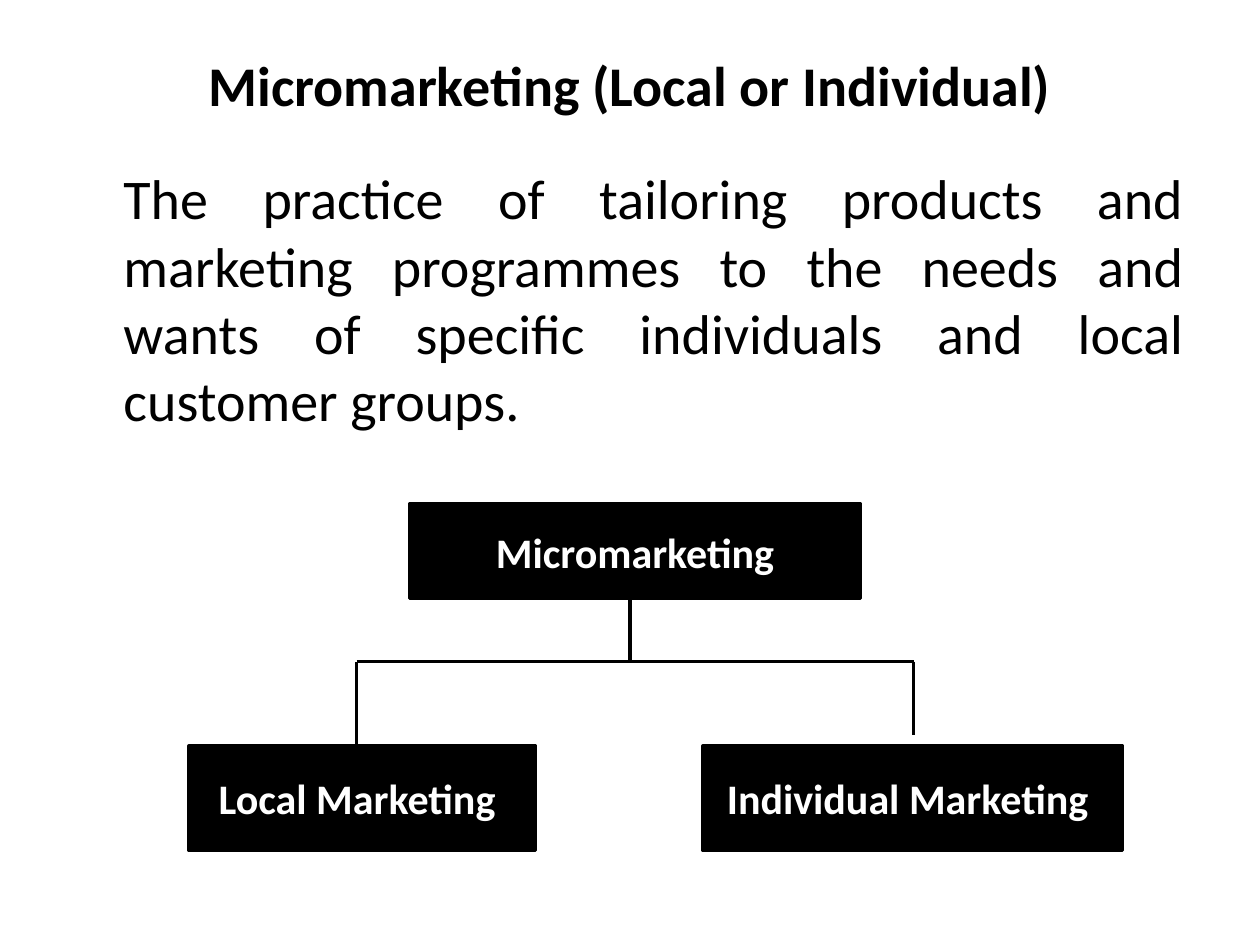
import pptx
import pptx.dml.color
import pptx.enum.shapes
import pptx.enum.text
import pptx.oxml
import pptx.oxml.ns
import pptx.util

Inches, Pt = pptx.util.Inches, pptx.util.Pt
RGB = pptx.dml.color.RGBColor
ALIGN = pptx.enum.text.PP_ALIGN
ANCHOR = pptx.enum.text.MSO_ANCHOR


class Theme:
    ink = RGB.from_string("000000")
    paper = RGB.from_string("FFFFFF")
    line = Pt(2)
    title = {"name": "Calibri", "size": Pt(32), "bold": True}
    body = {"name": "Calibri", "size": Pt(32), "bold": False}
    node = {"name": "Calibri", "size": Pt(24), "bold": True}


def set_attrs(obj, values):
    for name, value in values.items():
        setattr(obj, name, value)


def place(sp, box):
    set_attrs(sp, dict(zip(("left", "top", "width", "height"), map(Inches, box))))


def write(tf, text, font, color, align, anchor):
    set_attrs(tf, {"word_wrap": True, "vertical_anchor": anchor,
                   "auto_size": pptx.enum.text.MSO_AUTO_SIZE.NONE})
    p = tf.paragraphs[0]
    set_attrs(p, {"alignment": align, "space_before": Pt(0)})
    r = p.add_run()
    r.text = text
    set_attrs(r.font, font)
    r.font.color.rgb = color


def add_title(s, box, text):
    place(s.shapes.title, box)
    write(s.shapes.title.text_frame, text, Theme.title, Theme.ink,
          ALIGN.CENTER, ANCHOR.MIDDLE)


def add_definition(s, box, text):
    sp = s.placeholders[1]
    place(sp, box)
    # Indented paragraph without a bullet
    pPr = sp.text_frame.paragraphs[0]._p.get_or_add_pPr()
    pPr.set("marL", str(Inches(0.38)))
    pPr.set("indent", "0")
    pPr.append(pptx.oxml.parse_xml(
        f'<a:buNone {pptx.oxml.ns.nsdecls("a")}/>'))
    write(sp.text_frame, text, Theme.body, Theme.ink, ALIGN.JUSTIFY, ANCHOR.TOP)


def add_node(s, box, text, margin_right=0.1):
    sp = s.shapes.add_shape(pptx.enum.shapes.MSO_SHAPE.RECTANGLE,
                            *map(Inches, box))
    sp.shadow.inherit = False
    sp.fill.solid()
    sp.fill.fore_color.rgb = Theme.ink
    sp.line.color.rgb = Theme.ink
    sp.line.width = Theme.line
    write(sp.text_frame, text, Theme.node, Theme.paper,
          ALIGN.CENTER, ANCHOR.MIDDLE)
    sp.text_frame.margin_right = Inches(margin_right)


def add_line(s, x1, y1, x2, y2):
    c = s.shapes.add_connector(pptx.enum.shapes.MSO_CONNECTOR.STRAIGHT,
                               *map(Inches, (x1, y1, x2, y2)))
    c.line.color.rgb = Theme.ink
    c.line.width = Theme.line
    c._element.spPr.append(pptx.oxml.parse_xml(
        f'<a:effectLst {pptx.oxml.ns.nsdecls("a")}/>'))


def add_hierarchy(s, box):
    x, y, w, h = box
    root_h, leaf_h = 0.75, 0.83
    leaf_y = y + h - leaf_h
    bar_y = y + 1.25
    trunk_x, left_x, right_x = x + 3.5, x + 1.33, x + 5.75
    # Bar, two branches (the right one stops short of its node) and trunk
    add_line(s, left_x, bar_y, right_x, bar_y)
    add_line(s, left_x, bar_y, left_x, leaf_y)
    add_line(s, right_x, bar_y, right_x, leaf_y - 0.09)
    add_line(s, trunk_x, y + root_h, trunk_x, bar_y)
    # Nodes
    add_node(s, (x, leaf_y, 2.75, leaf_h), "Local Marketing", 0.18)
    add_node(s, (x + w - 3.33, leaf_y, 3.33, leaf_h),
             "Individual Marketing", 0.18)
    add_node(s, (x + 1.75, y, 3.58, root_h), "Micromarketing")


def main():
    prs = pptx.Presentation()
    set_attrs(prs, {"slide_width": Inches(10), "slide_height": Inches(7.5)})
    s = prs.slides.add_slide(prs.slide_layouts[1])
    add_title(s, (0.5, 0.25, 9, 0.83), "Micromarketing (Local or Individual)")
    add_definition(s, (0.5, 1.25, 9, 5.45),
                   "The practice of tailoring products and marketing programmes "
                   "to the needs and wants of specific individuals and local "
                   "customer groups.")
    add_hierarchy(s, (1.5, 4, 7.41, 2.75))
    prs.save("out.pptx")


if __name__ == "__main__":
    main()
